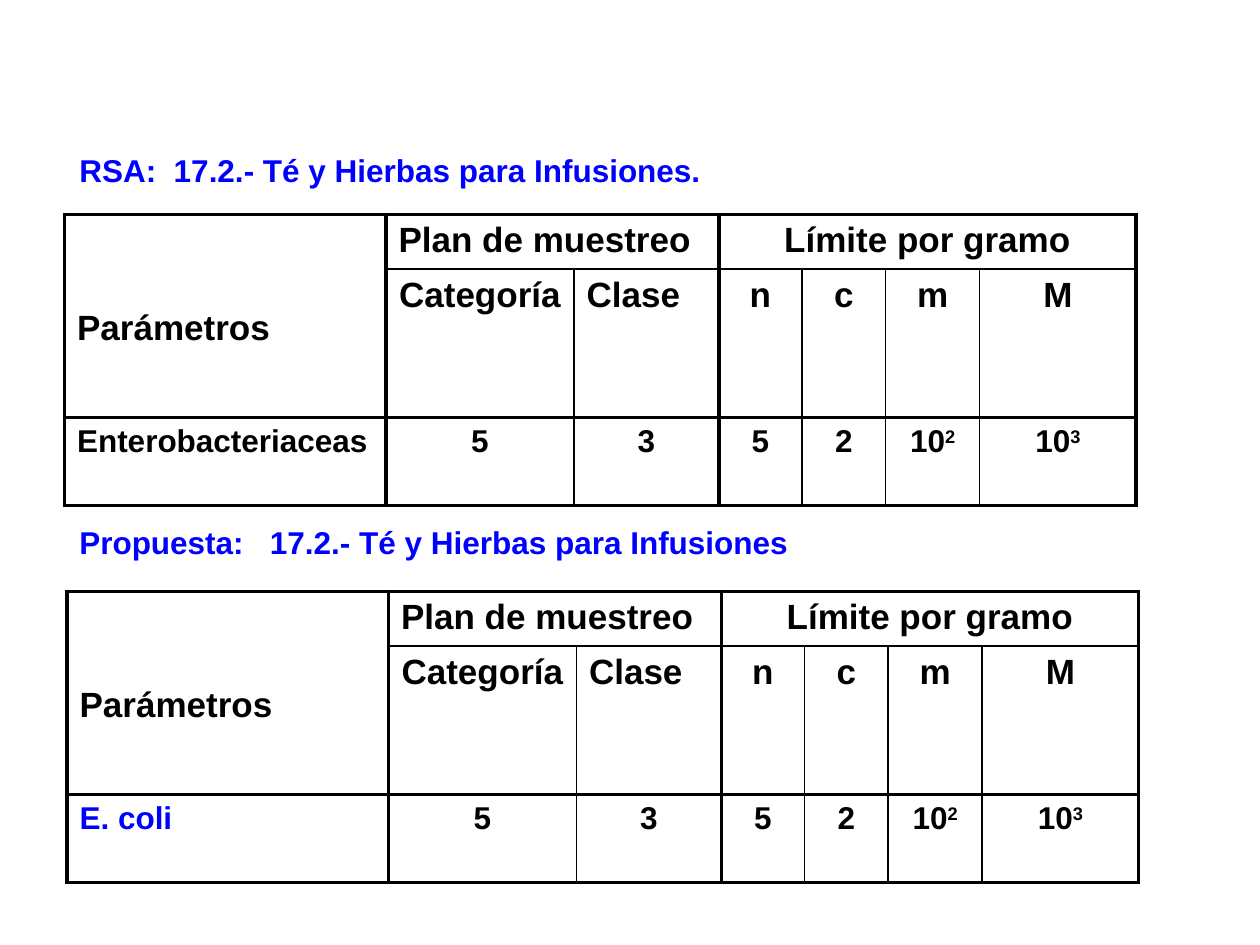
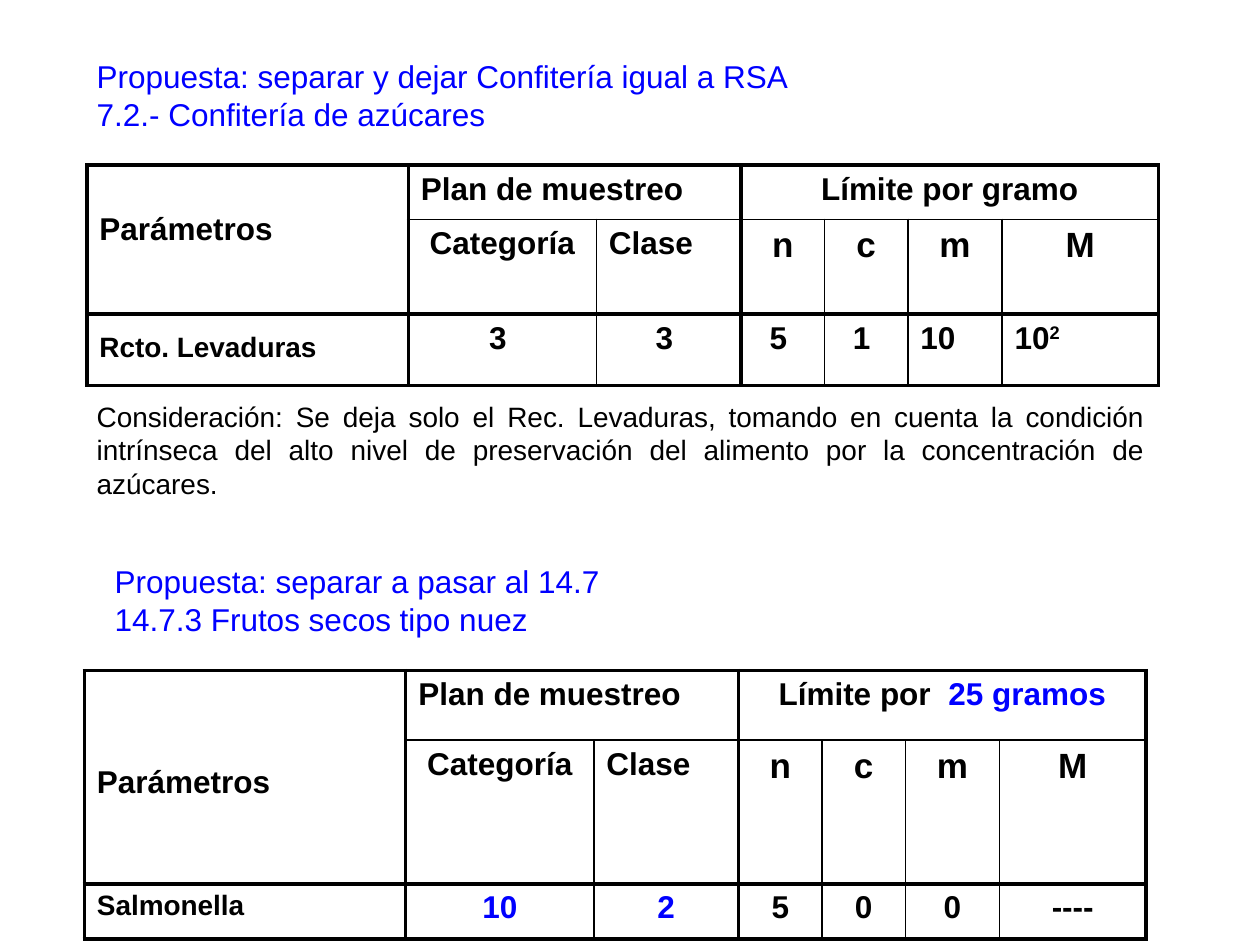
from dataclasses import dataclass

from lxml import etree
from pptx import Presentation
from pptx.dml.color import RGBColor
from pptx.enum.text import MSO_AUTO_SIZE, PP_ALIGN
from pptx.oxml.ns import qn
from pptx.util import Cm, Pt

LEFT, MID, FULL = PP_ALIGN.LEFT, PP_ALIGN.CENTER, PP_ALIGN.JUSTIFY
FIT = MSO_AUTO_SIZE.SHAPE_TO_FIT_TEXT
FONT = "Arial"
BLACK, BLUE = "000000", "0000FF"
THICK, THIN = 2.25, 1
WIDTHS = (6.48, 3.79, 2.92, 1.68, 1.68, 1.9)
BARS = {0, 1, 3, 7}


@dataclass(frozen=True)
class Cell:
    text: str
    size: float = 18
    hue: str = BLACK
    align: int = MID
    tail: str = ""
    tail_hue: str = BLACK
    power: bool = True
    top: float = 0.13


@dataclass(frozen=True)
class Note:
    left: float
    top: float
    width: float
    height: float
    text: str
    size: float = 18
    hue: str = BLUE
    bold: bool = False
    align: int = LEFT
    wrap: bool = True


@dataclass(frozen=True)
class Grid:
    left: float
    top: float
    rows: tuple[float, ...]
    body: tuple[Cell, ...]
    head: float = 18
    drop: float = 1.9
    last: float = 3.15
    limit: Cell = Cell("Límite por gramo")


def paint(font, size: float, hue: str, bold: bool) -> None:
    font.name = FONT
    font.size = Pt(size)
    font.bold = bold
    font.color.rgb = RGBColor.from_string(hue)


def rule(spot, side: str, width: float) -> None:
    props = spot._tc.get_or_add_tcPr()
    line = etree.SubElement(props, qn(f"a:ln{side}"), w=str(Pt(width)))
    fill = etree.SubElement(line, qn("a:solidFill"))
    etree.SubElement(fill, qn("a:srgbClr"), val=BLACK)


def frame(spot, row: int, col: int) -> None:
    for side, edge in (("L", col), ("R", col + 1)):
        rule(spot, side, THICK if row == 0 or edge in BARS else THIN)
    for side, edge in (("T", row), ("B", row + 1)):
        rule(spot, side, THICK if col == 0 or edge != 1 else THIN)
    spot.fill.background()


def write(spot, cell: Cell) -> None:
    spot.margin_top = Cm(cell.top)
    para = spot.text_frame.paragraphs[0]
    para.text = cell.text
    para.alignment = cell.align
    paint(para.runs[0].font, cell.size, cell.hue, True)
    if cell.tail:
        run = para.add_run()
        run.text = cell.tail
        paint(run.font, cell.size, cell.tail_hue, True)
        if cell.power:
            run.font._element.set("baseline", "30000")


def draw_grid(slide, grid: Grid) -> None:
    widths = WIDTHS + (grid.last,)
    shape = slide.shapes.add_table(
        len(grid.rows), len(widths), Cm(grid.left), Cm(grid.top),
        Cm(sum(widths)), Cm(sum(grid.rows)))
    table = shape.table
    table.first_row = table.horz_banding = False
    for col, width in zip(table.columns, widths):
        col.width = Cm(width)
    for row, height in zip(table.rows, grid.rows):
        row.height = Cm(height)
    for row in range(len(grid.rows)):
        for col in range(len(widths)):
            frame(table.cell(row, col), row, col)
    for start, end in (((0, 0), (1, 0)), ((0, 1), (0, 2)), ((0, 3), (0, 6))):
        table.cell(*start).merge(table.cell(*end))

    write(table.cell(0, 0), Cell("Parámetros", grid.head, align=LEFT, top=grid.drop))
    write(table.cell(0, 1), Cell("Plan de muestreo", grid.head, align=LEFT))
    write(table.cell(0, 3), grid.limit)
    write(table.cell(1, 1), Cell("Categoría", grid.head))
    write(table.cell(1, 2), Cell("Clase", grid.head, align=LEFT))
    for col, text in enumerate("ncmM", 3):
        write(table.cell(1, col), Cell(text, 20))
    for col, cell in enumerate(grid.body):
        write(table.cell(2, col), cell)


def draw_note(slide, note: Note) -> None:
    box = slide.shapes.add_textbox(
        Cm(note.left), Cm(note.top), Cm(note.width), Cm(note.height))
    text = box.text_frame
    text.text = note.text
    text.word_wrap = note.wrap
    text.auto_size = FIT
    for para in text.paragraphs:
        para.alignment = note.align
        for run in para.runs:
            paint(run.font, note.size, note.hue, note.bold)


def herb_grid(left: float, top: float, name: Cell) -> Grid:
    body = (name, Cell("5"), Cell("3"), Cell("5"), Cell("2"),
            Cell("10", tail="2"), Cell("10", tail="3"))
    return Grid(left, top, (1.09, 2.99, 1.78), body, head=20,
                limit=Cell("Límite por gramo", 20))


HERBS = (
    Note(1.35, 10.41, 19, 1.02, "Propuesta:   17.2.- Té y Hierbas para Infusiones",
         bold=True),
    herb_grid(1.35, 11.92, Cell("E. coli", hue=BLUE, align=LEFT)),
    Note(1.35, 2.92, 19, 1.02, "RSA:  17.2.- Té y Hierbas para Infusiones.", bold=True),
    herb_grid(1.3, 4.32, Cell("Enterobacteriaceas", align=LEFT)),
)

SWEETS = (
    Note(2.06, 11.2, 10.39, 1.8,
         "Propuesta: separar a pasar al 14.7\n14.7.3 Frutos secos tipo nuez",
         wrap=False),
    Grid(1.7, 13.52, (1.4, 2.9, 1.11),
         (Cell("Salmonella", 16, align=LEFT), Cell("10", hue=BLUE),
          Cell("2", hue=BLUE), Cell("5"), Cell("0"), Cell("0"), Cell("----")),
         last=2.95,
         limit=Cell("Límite por  ", tail="25 gramos", tail_hue=BLUE, power=False)),
    Note(1.7, 1.02, 14.58, 1.8,
         "Propuesta: separar y dejar Confitería igual a RSA\n7.2.- Confitería de azúcares",
         wrap=False),
    Grid(1.75, 3.33, (1.09, 1.91, 1.44),
         (Cell("Rcto. Levaduras", 16, align=LEFT, top=0.37), Cell("3 "), Cell("3 "),
          Cell("5 "), Cell("1 "), Cell("10", align=LEFT),
          Cell("10", align=LEFT, tail="2")),
         drop=0.95),
    Note(1.7, 7.92, 21.62, 2.31,
         "Consideración: Se deja solo el Rec. Levaduras, tomando en cuenta la condición "
         "intrínseca del alto nivel de preservación del alimento por la concentración "
         "de azúcares.",
         size=16, hue=BLACK, align=FULL),
)


def main() -> None:
    deck = Presentation()
    deck.slide_width, deck.slide_height = Cm(25.4), Cm(19.05)
    for parts in (HERBS, SWEETS):
        slide = deck.slides.add_slide(deck.slide_layouts[6])
        for part in parts:
            if isinstance(part, Grid):
                draw_grid(slide, part)
            else:
                draw_note(slide, part)
    deck.save("out.pptx")


if __name__ == "__main__":
    main()
